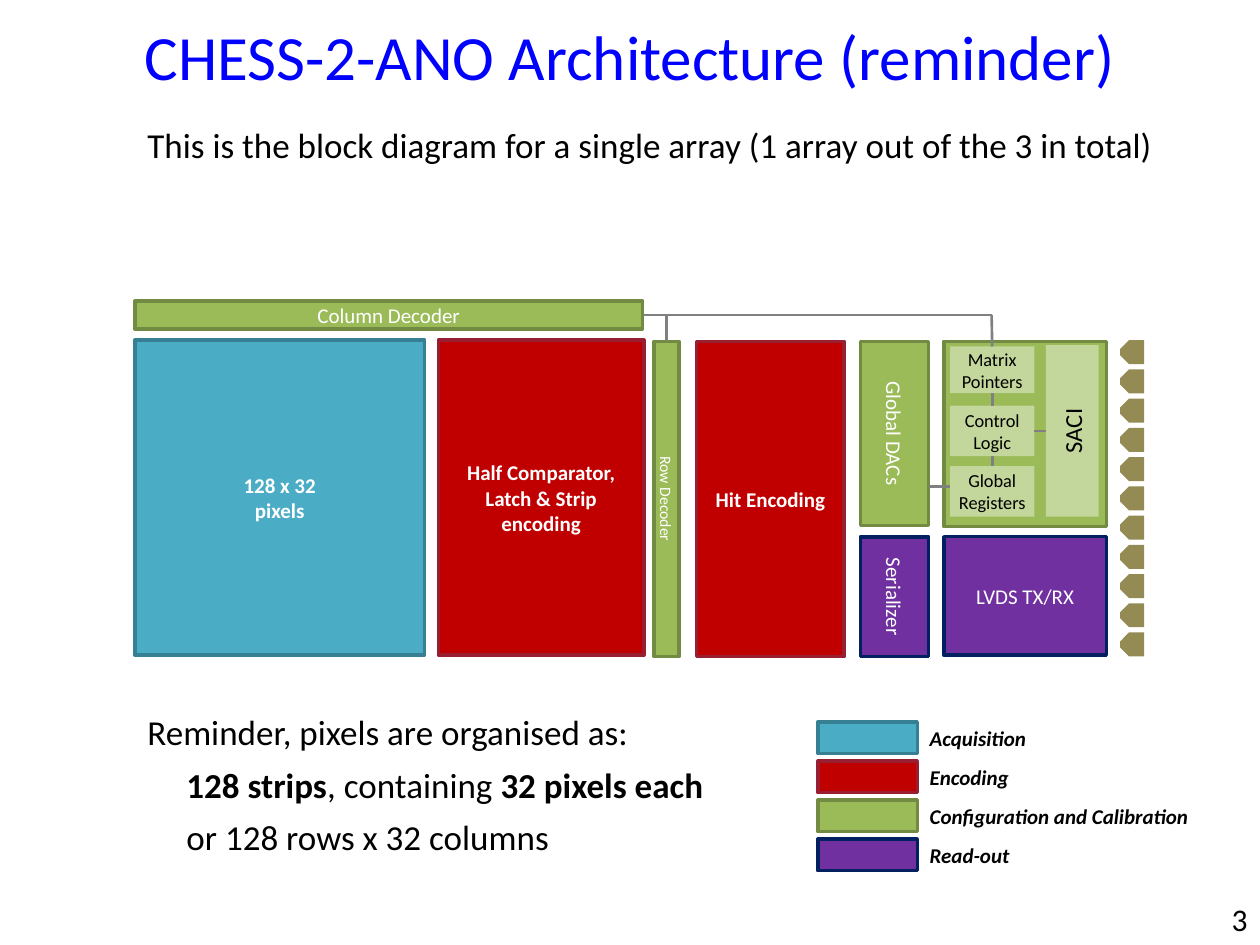
from dataclasses import dataclass

from lxml.etree import SubElement
from pptx import Presentation
from pptx.dml.color import RGBColor as RGB
from pptx.enum.shapes import MSO_CONNECTOR as Link, MSO_SHAPE as Shape
from pptx.enum.text import MSO_ANCHOR as Anchor, MSO_AUTO_SIZE as Fit, PP_ALIGN as Align
from pptx.oxml.ns import qn
from pptx.util import Inches, Pt


@dataclass(frozen=True)
class Theme:
    font: str = "Calibri"
    title: str = "0000FF"
    ink: str = "000000"
    light: str = "FFFFFF"
    wire: str = "808080"
    pale: str = "C3D69B"
    pad: str = "948A54"
    # Fill and edge of each kind of block
    acquire: tuple = ("4BACC6", "377F92")
    encode: tuple = ("C00000", "981E32")
    config: tuple = ("9BBB59", "738A42")
    read: tuple = ("7030A0", "002060")
    head: float = 36
    body: float = 20
    page: float = 18
    bus: float = 14
    label: float = 12
    small: float = 10.5
    tiny: float = 9
    edge: float = 2
    thin: float = 1.5


T = Theme()


def place(shape, x, y, w, h):
    shape.left, shape.top = Inches(x), Inches(y)
    shape.width, shape.height = Inches(w), Inches(h)


def add_run(par, text, size, color, bold=False, italic=False):
    run = par.add_run()
    run.text = text
    font = run.font
    font.name, font.size = T.font, Pt(size)
    font.bold, font.italic = bold, italic
    font.color.rgb = RGB.from_string(color)


def write(shape, lines, size, color, align=Align.CENTER, anchor=Anchor.MIDDLE,
          inset=None, turn=None, wrap=True, **style):
    frame = shape.text_frame
    frame.word_wrap, frame.auto_size = wrap, Fit.NONE
    frame.vertical_anchor = anchor
    if inset is not None:
        frame.margin_left = frame.margin_right = Inches(inset)
        frame.margin_top = frame.margin_bottom = Inches(inset)
    if turn:
        frame._txBody.bodyPr.set("vert", turn)
    for i, line in enumerate(lines):
        par = frame.add_paragraph() if i else frame.paragraphs[0]
        par.alignment = align
        add_run(par, line, size, color, **style)


def add_block(slide, box, fill, edge=None, kind=Shape.RECTANGLE):
    shape = slide.shapes.add_shape(kind, *map(Inches, box))
    shape.shadow.inherit = False
    shape.fill.solid()
    shape.fill.fore_color.rgb = RGB.from_string(fill)
    if edge:
        shape.line.color.rgb = RGB.from_string(edge)
        shape.line.width = Pt(T.edge)
    else:
        shape.line.fill.background()
    return shape


def add_wire(slide, start, end, head=None, tail=None):
    """Draw a wire; head and tail are (shape, side) joints."""
    wire = slide.shapes.add_connector(Link.STRAIGHT, *map(Inches, start + end))
    wire.line.color.rgb = RGB.from_string(T.wire)
    wire.line.width = Pt(T.thin)
    SubElement(wire._element.spPr, qn("a:effectLst"))
    if head:
        wire.begin_connect(*head)
    if tail:
        wire.end_connect(*tail)


def add_title(shape, text, box):
    place(shape, *box)
    write(shape, [text], T.head, T.title)


def add_list(shape, rows, box):
    """Fill a body placeholder with rows of (indent, runs)."""
    place(shape, *box)
    frame = shape.text_frame
    frame.word_wrap, frame.auto_size = True, Fit.NONE
    frame.vertical_anchor = Anchor.TOP
    for i, (indent, runs) in enumerate(rows):
        par = frame.add_paragraph() if i else frame.paragraphs[0]
        par.space_before, par.space_after = Pt(0), Pt(6)
        props = par._p.get_or_add_pPr()
        props.set("marL", str(Inches(indent)))
        props.set("indent", "0")
        SubElement(props, qn("a:buNone"))
        for text, bold in runs:
            add_run(par, text, T.body, T.ink, bold)


def add_array(slide, x, y):
    """Pixel array, encoders and decoders; returns the two decoders."""
    def part(box, tone, lines, size=T.label, **style):
        dx, dy, w, h = box
        shape = add_block(slide, (x + dx, y + dy, w, h), *tone)
        write(shape, lines, size, T.light, **style)
        return shape

    part((0, 0.31, 2.3, 2.5), T.acquire, ["128 x 32", "pixels"], bold=True)
    part((2.41, 0.31, 1.63, 2.5), T.encode,
         ["Half Comparator,", "Latch & Strip encoding"], bold=True)
    part((4.46, 0.32, 1.17, 2.5), T.encode, ["Hit Encoding"], bold=True)
    column = part((0, 0, 4.03, 0.22), T.config, ["Column Decoder"])
    row = part((4.12, 0.32, 0.2, 2.5), T.config, ["Row Decoder"], T.tiny,
               inset=0, turn="vert")
    part((5.76, 0.32, 0.54, 1.46), T.config, ["Global DACs"], turn="vert")
    part((5.76, 1.87, 0.54, 0.95), T.read, ["Serializer"], inset=0, turn="vert")
    part((6.42, 1.87, 1.29, 0.94), T.read, ["LVDS TX/RX"], inset=0)
    return column, row


def add_control(slide, x, y):
    """Control panel with its inner links; returns the top cell."""
    add_block(slide, (x, y, 1.29, 1.47), *T.config)
    saci = add_block(slide, (x + 0.81, y + 0.03, 0.42, 1.36), T.pale)
    write(saci, ["SACI"], T.bus, T.ink, turn="vert270")
    cells = []
    for dy, h, lines in ((0.04, 0.37, ["Matrix", "Pointers"]),
                         (0.51, 0.4, ["Control Logic"]),
                         (0.99, 0.4, ["Global Registers"])):
        cell = add_block(slide, (x + 0.05, y + dy, 0.67, h), T.pale)
        write(cell, lines, T.small, T.ink, inset=0)
        cells.append(cell)
    mid = x + 0.38
    for above, below in zip(cells, cells[1:]):
        add_wire(slide, (mid, y), (mid, y), (above, 2), (below, 0))
    add_wire(slide, (x, y), (x, y), (cells[1], 3), (saci, 1))
    # Registers to the DACs
    add_wire(slide, (x - 0.12, y + 1.15), (x + 0.05, y + 1.15))
    return cells[0]


def add_pads(slide, x, y, count=11, size=0.19, pitch=0.232):
    for i in range(count):
        pad = add_block(slide, (x, y + i * pitch, size, size), T.pad,
                        kind=Shape.SNIP_2_SAME_RECTANGLE)
        pad.adjustments[0], pad.adjustments[1] = 0.37, 0
        pad.rotation = 270


def add_diagram(slide, x, y):
    column, row = add_array(slide, x, y)
    matrix = add_control(slide, x + 6.42, y + 0.32)
    add_pads(slide, x + 7.82, y + 0.31)
    # Bus from the column decoder, with two drops
    bus, drop, end = y + 0.11, x + 4.22, x + 6.8
    add_wire(slide, (x + 4.03, bus), (end, bus), head=(column, 3))
    add_wire(slide, (drop, bus), (drop, y), tail=(row, 0))
    add_wire(slide, (end, bus), (end, y), tail=(matrix, 0))


def add_legend(slide, x, y, pitch=0.31):
    rows = ((T.acquire, "Acquisition"), (T.encode, "Encoding"),
            (T.config, "Configuration and Calibration"), (T.read, "Read-out"))
    for i, (tone, name) in enumerate(rows):
        top = y + i * pitch
        add_block(slide, (x, top, 0.79, 0.25), *tone)
        note = slide.shapes.add_textbox(*map(Inches, (x + 0.79, top - 0.02, 2.58, 0.3)))
        write(note, [name], T.label, T.ink, Align.LEFT, Anchor.TOP,
              wrap=False, bold=True, italic=True)


def add_page(slide, text, box):
    note = slide.shapes.add_textbox(*map(Inches, box))
    write(note, [text], T.page, T.ink, Align.RIGHT)


def main():
    deck = Presentation()
    deck.slide_width, deck.slide_height = Inches(10), Inches(7.5)
    slide = deck.slides.add_slide(deck.slide_layouts[3])
    title, intro, notes = list(slide.placeholders)[:3]

    add_title(title, "CHESS-2-ANO Architecture (reminder)", (0.5, 0.13, 9, 0.62))
    add_list(intro, [(0, [("This is the block diagram for a single array "
                           "(1 array out of the 3 in total)", False)])],
             (1.07, 0.93, 8.79, 0.44))
    add_list(notes, [
        (0, [("Reminder, pixels are organised as:", False)]),
        (0.31, [("128 strips", True), (", containing ", False),
                ("32 pixels each", True)]),
        (0.31, [("or 128 rows x 32 columns", False)]),
    ], (1.07, 5.59, 5.31, 1.28))
    add_diagram(slide, 1.07, 2.39)
    add_legend(slide, 6.49, 5.73)
    add_page(slide, "3", (9.25, 7.09, 0.75, 0.4))
    deck.save("out.pptx")


if __name__ == "__main__":
    main()
